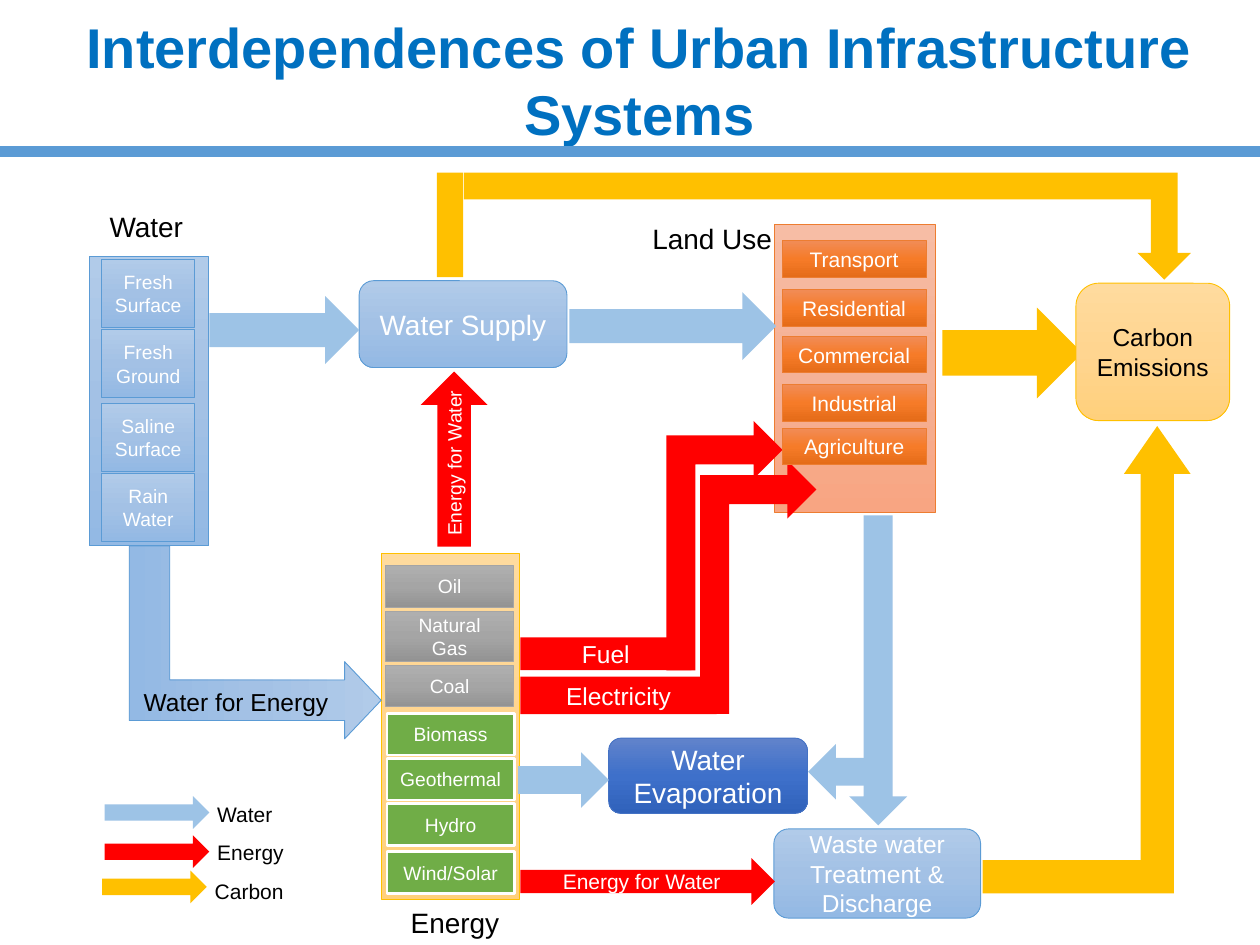
from copy import deepcopy

from pptx import Presentation
from pptx.dml.color import RGBColor
from pptx.enum.shapes import MSO_CONNECTOR, MSO_SHAPE
from pptx.enum.text import MSO_ANCHOR, PP_ALIGN
from pptx.oxml.ns import qn
from pptx.util import Cm, Pt
from lxml import etree

STRAIGHT = MSO_CONNECTOR.STRAIGHT
RECT, ROUNDED = MSO_SHAPE.RECTANGLE, MSO_SHAPE.ROUNDED_RECTANGLE
RIGHT, UP, DOWN = MSO_SHAPE.RIGHT_ARROW, MSO_SHAPE.UP_ARROW, MSO_SHAPE.DOWN_ARROW
BENT = MSO_SHAPE.BENT_UP_ARROW
MIDDLE, TOP = MSO_ANCHOR.MIDDLE, MSO_ANCHOR.TOP
CENTER, LEFT = PP_ALIGN.CENTER, PP_ALIGN.LEFT

WHITE = RGBColor(0xFF, 0xFF, 0xFF)
BLACK = RGBColor(0x00, 0x00, 0x00)
TITLE_BLUE = RGBColor(0x00, 0x70, 0xC0)
BLUE = RGBColor(0x5B, 0x9B, 0xD5)
NAVY = RGBColor(0x44, 0x72, 0xC4)
ORANGE = RGBColor(0xED, 0x7D, 0x31)
GRAY = RGBColor(0xA5, 0xA5, 0xA5)
GREEN = RGBColor(0x70, 0xAD, 0x47)
WATER = RGBColor(0x9D, 0xC3, 0xE6)
ENERGY = RGBColor(0xFF, 0x00, 0x00)
CARBON = RGBColor(0xFF, 0xC0, 0x00)
BLUE_FADE = (RGBColor(0xB1, 0xCB, 0xE9), RGBColor(0xA3, 0xC1, 0xE5), RGBColor(0x93, 0xB9, 0xE4))
GOLD_FADE = (RGBColor(0xFF, 0xDB, 0x9E), RGBColor(0xFF, 0xD5, 0x90), RGBColor(0xFF, 0xD0, 0x7C))
PEACH_FADE = (RGBColor(0xF7, 0xBD, 0xA5), RGBColor(0xF5, 0xB1, 0x96), RGBColor(0xF8, 0xA5, 0x82))
ORANGE_FADE = (RGBColor(0xF1, 0x8C, 0x57), RGBColor(0xF6, 0x7B, 0x28), RGBColor(0xE5, 0x6C, 0x19))
GRAY_FADE = (RGBColor(0xAF, 0xAF, 0xAF), RGBColor(0xA5, 0xA5, 0xA5), RGBColor(0x93, 0x93, 0x93))
NAVY_FADE = (RGBColor(0x61, 0x83, 0xCB), RGBColor(0x3E, 0x70, 0xCA), RGBColor(0x30, 0x62, 0xBB))


def within(box, offset):
    """Return the slide position and size of a part placed inside a box."""
    x, y, width, height = offset
    return [Cm(v) for v in (box[0] + x, box[1] + y, width, height)]


def write(owner, text, size, color, align=CENTER, anchor=MIDDLE, wrap=True, bold=False):
    """Write text, one paragraph a line, into a shape or text box."""
    frame = owner.text_frame
    for name, value in {"text": text, "word_wrap": wrap, "vertical_anchor": anchor}.items():
        setattr(frame, name, value)
    style = {"name": "Arial", "size": Pt(size), "bold": bold}
    for paragraph in frame.paragraphs:
        paragraph.alignment = align
        for run in paragraph.runs:
            for name, value in style.items():
                setattr(run.font, name, value)
            run.font.color.rgb = color


def label(slide, box, offset, text, size, color=BLACK, rotation=0, **layout):
    """Add a plain text label."""
    caption = slide.shapes.add_textbox(*within(box, offset))
    caption.rotation = rotation
    write(caption, text, size, color, anchor=TOP, **layout)


def block(slide, box, offset, fill, preset=RECT, line=None, weight=0.5,
          text="", size=11, color=WHITE):
    """Add a shape with a solid or three-stop fill, and optional line and text."""
    part = slide.shapes.add_shape(preset, *within(box, offset))
    part.shadow.inherit = False
    if isinstance(fill, RGBColor):
        part.fill.solid()
        part.fill.fore_color.rgb = fill
    else:
        part.fill.gradient()
        part.fill.gradient_angle = 270
        stops = part.element.spPr.find(".//" + qn("a:gsLst"))
        stops.insert(1, deepcopy(stops[0]))
        for stop, shade, position in zip(part.fill.gradient_stops, fill, (0, 0.5, 1)):
            stop.color.rgb = shade
            stop.position = position
    if line is None:
        part.line.fill.background()
    else:
        part.line.color.rgb = line
        part.line.width = Pt(weight)
    if text:
        write(part, text, size, color)
    return part


def flow(slide, box, offset, fill, preset, rotation=0, flip=False, bends=(), line=None):
    """Add a block arrow, turned, flipped or reshaped as asked."""
    arrow = block(slide, box, offset, fill, preset, line)
    arrow.rotation = rotation
    if flip:
        arrow.element.spPr.find(qn("a:xfrm")).set("flipV", "1")
    for index, bend in enumerate(bends):
        arrow.adjustments[index] = bend


def header(slide, box):
    """Add the title and the rule below it."""
    label(slide, box, (1.09, 0.13, 23.6, 3), "Interdependences of Urban Infrastructure Systems",
          32, TITLE_BLUE, bold=True)
    left, bottom, right = box[0], box[1] + box[3], box[0] + box[2]
    rule = slide.shapes.add_connector(STRAIGHT, Cm(left), Cm(bottom), Cm(right), Cm(bottom))
    rule.line.color.rgb = BLUE
    rule.line.width = Pt(6)
    etree.SubElement(rule.element.spPr, qn("a:effectLst"))


def panel(slide, box, fill, line, name, name_at):
    """Add the backing of a stack and its name."""
    block(slide, box, (0, 0, *box[2:]), fill, line=line)
    label(slide, box, (*name_at, 2.97, 0.94), name, 16, align=LEFT)


def stack(slide, box, tiles, left, width, height, size, **look):
    """Add tiles, given as text and top, down a panel."""
    for text, top in tiles:
        block(slide, box, (left, top, width, height), text=text, size=size, **look)


def facilities(slide, box):
    """Add the four rounded process boxes."""
    for text, offset, fill, line, size, color in (
        ("Water Supply", (5.44, 2.26, 4.19, 1.75), BLUE_FADE, BLUE, 16, WHITE),
        ("Waste water Treatment & Discharge", (13.8, 13.31, 4.17, 1.8), BLUE_FADE, BLUE, 14, WHITE),
        ("Water Evaporation", (10.47, 11.48, 4.01, 1.52), NAVY_FADE, NAVY, 16, WHITE),
        ("Carbon Emissions", (19.89, 2.31, 3.1, 2.77), GOLD_FADE, CARBON, 14, BLACK),
    ):
        block(slide, box, offset, fill, ROUNDED, line, text=text, size=size, color=color)


def water_flows(slide, box):
    """Add the water arrows."""
    flow(slide, box, (1.4, 7.01, 3.89, 5.08), BLUE_FADE, BENT, 90,
         bends=(0.21, 0.2, 0.19), line=BLUE)
    for offset, preset, rotation in (
        ((2.42, 2.57, 3.02, 1.37), RIGHT, 0),
        ((9.68, 2.49, 4.17, 1.37), RIGHT, 0),
        ((15.32, 6.99, 1.17, 6.25), DOWN, 0),
        ((14.58, 11.51, 1.12, 1.3), DOWN, 90),
        ((9, 11.41, 1.12, 1.83), DOWN, 270),
    ):
        flow(slide, box, offset, WATER, preset, rotation)
    label(slide, box, (0.84, 10.32, 4.24, 0.86), "Water for Energy", 14, wrap=False)


def energy_flows(slide, box):
    """Add the energy arrows and their names."""
    flow(slide, box, (6.68, 4.09, 1.35, 3.53), ENERGY, UP)
    flow(slide, box, (10.29, 6.43, 5.03, 2.34), ENERGY, BENT, 270, flip=True)
    flow(slide, box, (10.93, 7.27, 5.11, 2.34), ENERGY, BENT, 270, flip=True)
    for text, offset, preset, size in (
        ("Fuel", (8.69, 9.45, 3.45, 0.66), RECT, 14),
        ("Electricity", (8.69, 10.24, 3.96, 0.76), RECT, 14),
        ("Energy for Water", (8.69, 13.9, 5.13, 0.94), RIGHT, 12),
    ):
        block(slide, box, offset, ENERGY, preset, text=text, size=size)
    label(slide, box, (5.64, 5.57, 3.45, 0.74), "Energy for Water", 11, WHITE, 270, wrap=False)


def carbon_flows(slide, box):
    """Add the carbon arrows."""
    flow(slide, box, (17.2, 2.8, 2.82, 1.83), CARBON, RIGHT)
    flow(slide, box, (18.01, 5.19, 4.19, 9.42), CARBON, BENT, bends=(0.16, 0.16, 0.23))
    flow(slide, box, (7.55, 0.08, 14.66, 2.16), CARBON, BENT, flip=True)
    block(slide, box, (7.01, 0.08, 0.53, 2.11), CARBON)


def legend(slide, box):
    """Add the key to the arrow colours."""
    for text, color, left, top, text_top in (
        ("Water", WATER, 0.05, 0, -0.02),
        ("Energy", ENERGY, 0.05, 0.79, 0.74),
        ("Carbon", CARBON, 0, 1.5, 1.53),
    ):
        flow(slide, box, (left, top, 2.11, 0.66), color, RIGHT)
        label(slide, box, (left + 2.02, text_top, 2.95, 0.76), text, 12, align=LEFT)


def main():
    """Build and save the slide."""
    deck = Presentation()
    deck.slide_width, deck.slide_height = Cm(25.4), Cm(19.05)
    slide = deck.slides.add_slide(deck.slide_layouts[6])
    diagram = (1.8, 3.4, 23, 15.65)
    sources, supply, land = (1.8, 5.18, 2.41, 5.82), (7.7, 11.15, 2.77, 6.98), (15.62, 4.52, 3.23, 5.82)

    panel(slide, sources, BLUE_FADE, BLUE, "Water", (0.16, -1.09))
    panel(slide, supply, GOLD_FADE, CARBON, "Energy", (0.33, 6.99))
    panel(slide, land, PEACH_FADE, ORANGE, "Land Use", (-2.72, -0.18))
    for draw in (carbon_flows, facilities, water_flows, energy_flows):
        draw(slide, diagram)

    stack(slide, sources, (("Fresh Surface", 0.05), ("Fresh Ground", 1.47),
                           ("Saline Surface", 2.95), ("Rain\nWater", 4.37)),
          0.25, 1.88, 1.37, 11, fill=BLUE_FADE, line=BLUE)
    fossil = {"fill": GRAY_FADE, "line": GRAY}
    stack(slide, supply, (("Oil", 0.25), ("Coal", 2.26)), 0.08, 2.57, 0.84, 11, **fossil)
    stack(slide, supply, (("Natural Gas", 1.17),), 0.08, 2.57, 1.02, 11, **fossil)
    stack(slide, supply, (("Biomass", 3.23), ("Geothermal", 4.14), ("Hydro", 5.05),
                          ("Wind/Solar", 6.02)),
          0.1, 2.57, 0.84, 11, fill=GREEN, line=WHITE, weight=1.5)
    stack(slide, land, (("Transport", 0.33), ("Residential", 1.32), ("Commercial", 2.26),
                        ("Industrial", 3.23), ("Agriculture", 4.11)),
          0.15, 2.9, 0.74, 12, fill=ORANGE_FADE, line=ORANGE)
    legend(slide, (2.06, 16.05, 5, 2.3))
    header(slide, (0, 0, 25.4, 3.05))
    deck.save("out.pptx")


if __name__ == "__main__":
    main()
